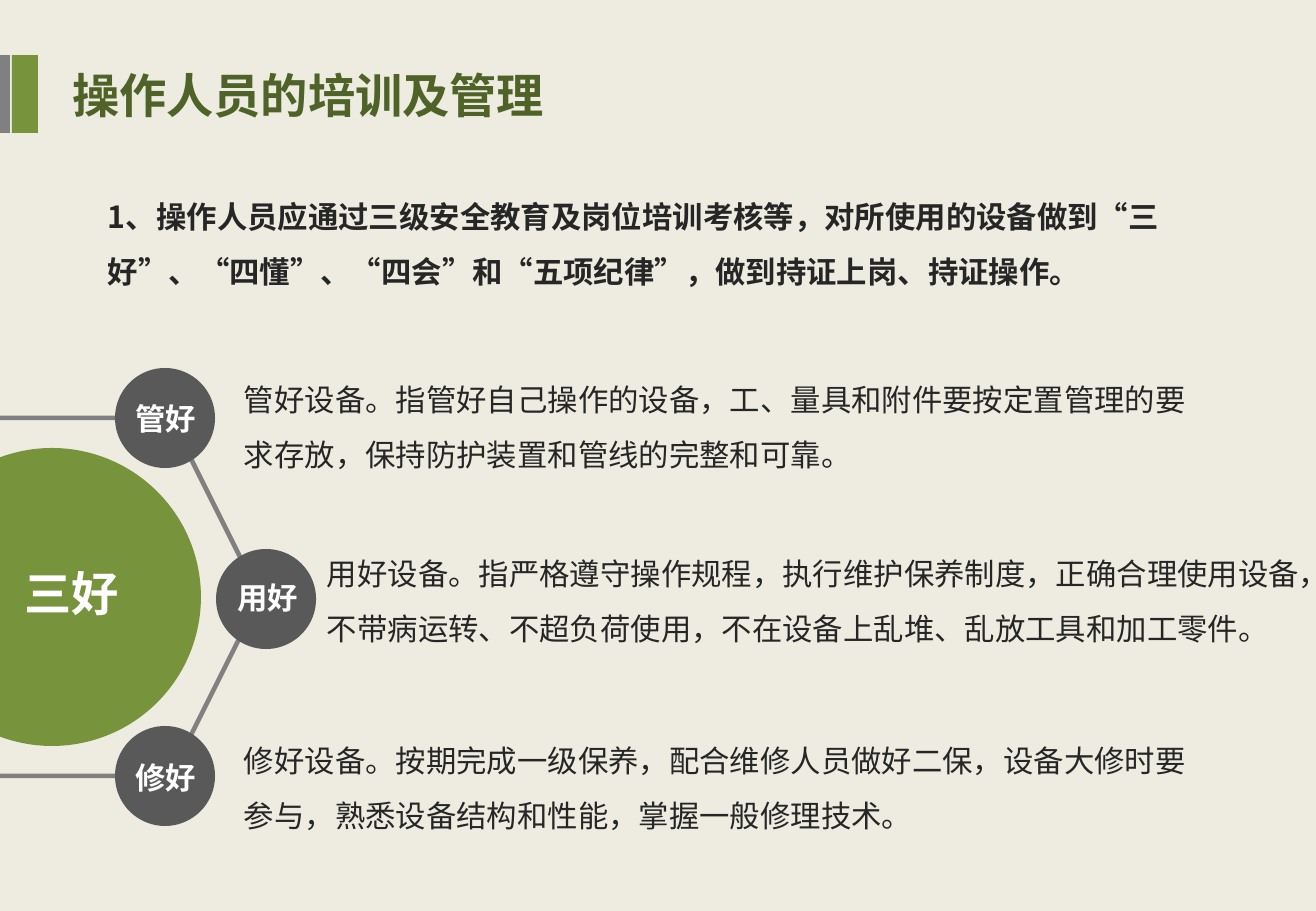
import pptx
import pptx.dml.color
import pptx.enum.lang
import pptx.enum.shapes
import pptx.enum.text
import pptx.oxml.ns
import pptx.util
import lxml.etree

SCALE = 914400 / 121.5
FONT = "Noto Sans CJK SC"
GREEN, GREY, DARK, INK, WHITE = "77933C", "808080", "595959", "262626", "FFFFFF"
SHAPES = pptx.enum.shapes.MSO_SHAPE
ALIGN = pptx.enum.text.PP_ALIGN

deck = pptx.Presentation()
deck.slide_width, deck.slide_height = round(1316 * SCALE), round(911 * SCALE)
page = deck.slides.add_slide(deck.slide_layouts[5])
page.background.fill.solid()
page.background.fill.fore_color.rgb = pptx.dml.color.RGBColor.from_string("EEECE1")


def write(box, text, color, size=18, bold=False, align=ALIGN.LEFT, spacing=1.0, wrap=True):
    frame = box.text_frame
    frame.text = text
    frame.word_wrap = wrap
    frame.auto_size = pptx.enum.text.MSO_AUTO_SIZE.SHAPE_TO_FIT_TEXT
    para = frame.paragraphs[0]
    para.alignment, para.line_spacing = align, spacing
    span = para.runs[0]
    looks = {
        "name": FONT,
        "size": pptx.util.Pt(size),
        "bold": bold,
        "language_id": pptx.enum.lang.MSO_LANGUAGE_ID.SIMPLIFIED_CHINESE,
    }
    for key, value in looks.items():
        setattr(span.font, key, value)
    span.font.color.rgb = pptx.dml.color.RGBColor.from_string(color)
    east_asian = lxml.etree.SubElement(span.font._element, pptx.oxml.ns.qn("a:ea"))
    east_asian.set("typeface", FONT)


def draw(kind, area, fill=None, line=None):
    shape = page.shapes.add_shape(kind, *[round(length * SCALE) for length in area])
    shape.shadow.inherit = False
    for paint, color in ((shape.fill, fill), (shape.line.fill, line)):
        if color:
            paint.solid()
            paint.fore_color.rgb = pptx.dml.color.RGBColor.from_string(color)
        else:
            paint.background()
    return shape


title = page.shapes.title
title_place = {"left": 60, "top": 60, "width": 919, "height": 69}
for key, value in title_place.items():
    setattr(title, key, round(value * SCALE))
write(title, "操作人员的培训及管理", "4F6228", size=28, bold=True)
title.text_frame.vertical_anchor = pptx.enum.text.MSO_ANCHOR.MIDDLE

draw(SHAPES.RECTANGLE, (12, 55, 26, 78), GREEN)
draw(SHAPES.RECTANGLE, (0, 55, 10, 78), GREY)
draw(SHAPES.OVAL, (-97, 448, 298, 298), GREEN)
ring = draw(SHAPES.HEXAGON, (-156, 418, 416, 358), line=GREY)
ring.line.width = pptx.util.Pt(2.75)

for left, top in ((115, 368), (216, 549), (115, 726)):
    draw(SHAPES.OVAL, (left, top, 100, 100), DARK)

body = {"color": INK, "spacing": 1.5}
label = {"color": WHITE, "bold": True, "align": ALIGN.CENTER, "wrap": False}
texts = [
    ((96, 174, 1123, 123), "1、操作人员应通过三级安全教育及岗位培训考核等，对所使用的设备做到“三好”、“四懂”、“四会”和“五项纪律”，做到持证上岗、持证操作。", {**body, "bold": True}),
    ((232, 357, 973, 123), "管好设备。指管好自己操作的设备，工、量具和附件要按定置管理的要求存放，保持防护装置和管线的完整和可靠。", body),
    ((315, 531, 1002, 123), "用好设备。指严格遵守操作规程，执行维护保养制度，正确合理使用设备，不带病运转、不超负荷使用，不在设备上乱堆、乱放工具和加工零件。", body),
    ((232, 718, 988, 123), "修好设备。按期完成一级保养，配合维修人员做好二保，设备大修时要参与，熟悉设备结构和性能，掌握一般修理技术。", body),
    ((123, 394, 86, 49), "管好", label),
    ((225, 573, 86, 49), "用好", label),
    ((123, 753, 86, 49), "修好", label),
    ((12, 558, 120, 69), "三好", {**label, "size": 28}),
]
for area, text, style in texts:
    box = page.shapes.add_textbox(*[round(length * SCALE) for length in area])
    write(box, text, **style)

deck.save("out.pptx")
